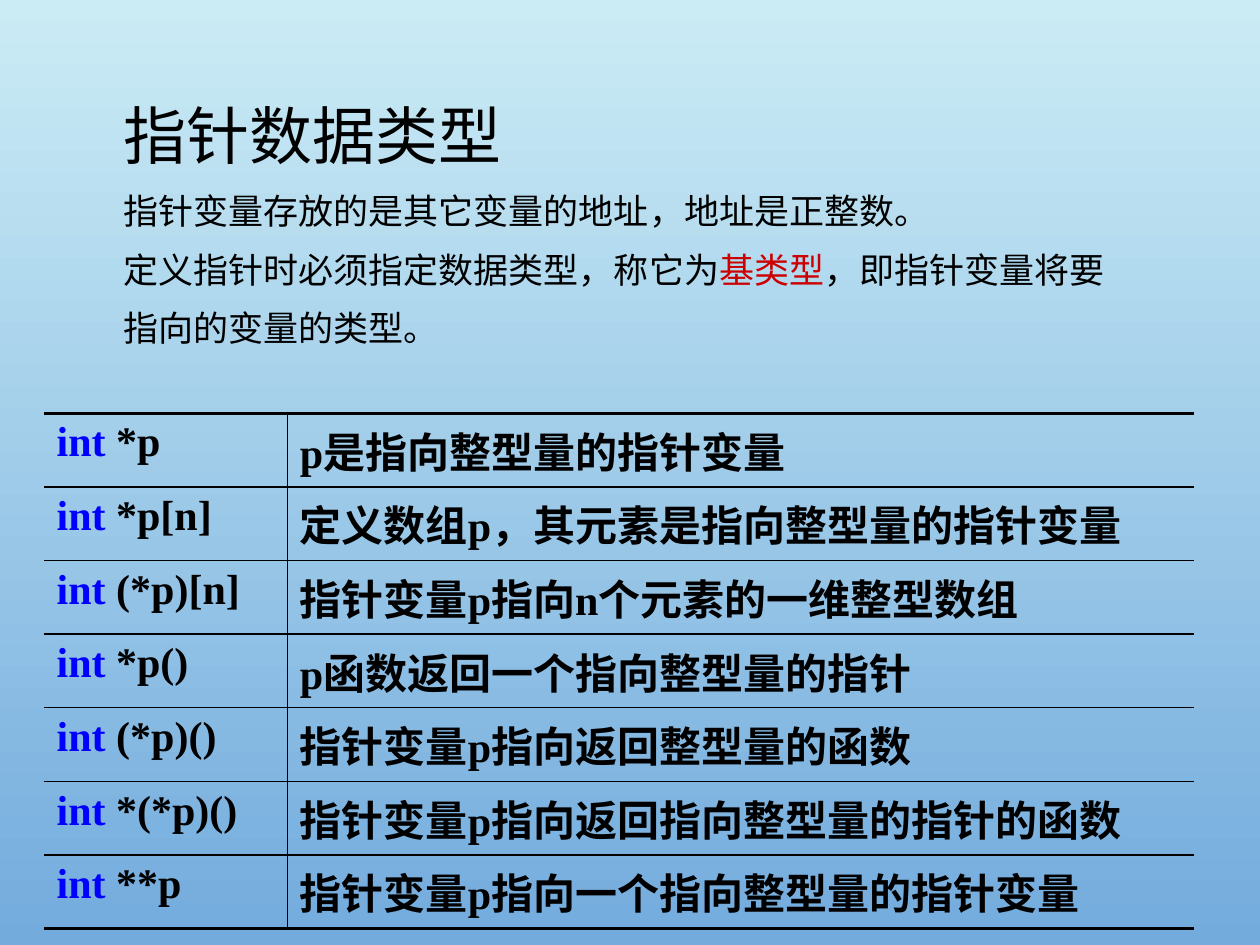
from pptx import Presentation
from pptx.dml.color import RGBColor
from pptx.enum.text import MSO_ANCHOR
from pptx.oxml import parse_xml
from pptx.oxml.ns import nsdecls
from pptx.util import Inches, Pt

TOP = MSO_ANCHOR.TOP
BLACK, BLUE, RED = "000000", "0000FF", "CC0000"
SKY = ["CBECF5", "73ABDD"]

# Content: paragraphs as (size, runs), runs as (text, colour)
INTRO = [
    (36, [("指针数据类型", BLACK)]),
    (20, [("指针变量存放的是其它变量的地址，地址是正整数。", BLACK)]),
    (20, [("定义指针时必须指定数据类型，称它为", BLACK), ("基类型", RED),
          ("，即指针变量将要指向的变量的类型。", BLACK)]),
]
TYPES = [
    ("*p", "p是指向整型量的指针变量"),
    ("*p[n]", "定义数组p，其元素是指向整型量的指针变量"),
    ("(*p)[n]", "指针变量p指向n个元素的一维整型数组"),
    ("*p()", "p函数返回一个指向整型量的指针"),
    ("(*p)()", "指针变量p指向返回整型量的函数"),
    ("*(*p)()", "指针变量p指向返回指向整型量的指针的函数"),
    ("**p", "指针变量p指向一个指向整型量的指针变量"),
]
COLS = [1.93, 7.2]
HEIGHT = 4.09
THIN, THICK = 1, 2.25


def rgb(code):
    return RGBColor.from_string(code)


def add_runs(para, runs, size, face, bold=False):
    for text, color in runs:
        run = para.add_run()
        run.text = text
        font = run.font
        font.size, font.name, font.bold = Pt(size), face, bold
        font.color.rgb = rgb(color)


def set_edges(cell, widths):
    """Draw the given sides (L, R, T, B) in black; width 0 means no line."""
    props = cell._tc.get_or_add_tcPr()
    for n, (side, width) in enumerate(widths.items()):
        fill = (f'<a:solidFill><a:srgbClr val="{BLACK}"/></a:solidFill>'
                if width else "<a:noFill/>")
        props.insert(n, parse_xml(
            f'<a:ln{side} {nsdecls("a")} w="{Pt(width)}">{fill}</a:ln{side}>'))


prs = Presentation()
prs.slide_width, prs.slide_height = Inches(10), Inches(7.5)
slide = prs.slides.add_slide(prs.slide_layouts[6])

# Background, running from top to bottom
back = slide.background.fill
back.gradient()
back.gradient_angle = 270
for stop, code in zip(back.gradient_stops, SKY):
    stop.color.rgb = rgb(code)

# Heading and explanation
box = slide.shapes.add_textbox(*map(Inches, (0.88, 0.48, 8.23, 2.52)))
frame = box.text_frame
frame.word_wrap = True
frame.vertical_anchor = TOP
for n, (size, runs) in enumerate(INTRO):
    para = frame.add_paragraph() if n else frame.paragraphs[0]
    para.line_spacing = 1.4
    add_runs(para, runs, size, "Arial")

# Table of declarations
last = len(TYPES) - 1
table = slide.shapes.add_table(
    len(TYPES), len(COLS), Inches(0.35), Inches(3.28),
    Inches(sum(COLS)), Inches(HEIGHT)).table
table.first_row = table.horz_banding = False
for col, width in zip(table.columns, COLS):
    col.width = Inches(width)
for r, (code, note) in enumerate(TYPES):
    cells = [[("int", BLUE), (" " + code, BLACK)], [(note, BLACK)]]
    for c, runs in enumerate(cells):
        cell = table.cell(r, c)
        cell.fill.background()
        add_runs(cell.text_frame.paragraphs[0], runs, 24,
                 "Times New Roman", True)
        set_edges(cell, {
            "L": THIN if c else 0,
            "R": 0 if c else THIN,
            "T": THIN if r else THICK,
            "B": THICK if r == last else THIN,
        })

prs.save("out.pptx")
